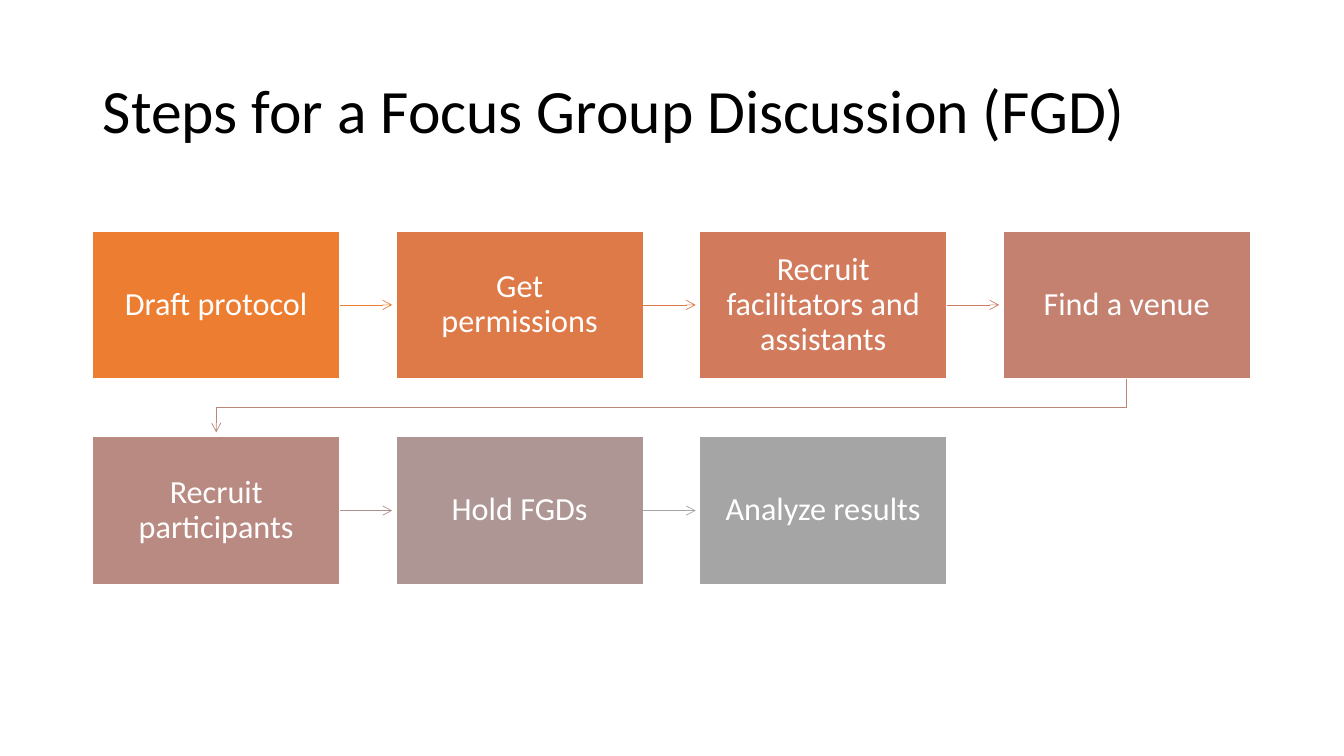
import pptx
import pptx.dml.color
import pptx.enum.shapes
import pptx.enum.text
import pptx.oxml.ns
import pptx.util
from lxml import etree
from pptx.dml.color import RGBColor
from pptx.util import Inches

BLACK = RGBColor(0x00, 0x00, 0x00)
WHITE = RGBColor(0xFF, 0xFF, 0xFF)

# Each step: label, box colour, colour of the arrow to the next step
STEPS = [
    ("Draft protocol", RGBColor(0xED, 0x7D, 0x31), RGBColor(0xED, 0x7D, 0x31)),
    ("Get permissions", RGBColor(0xDE, 0x7A, 0x47), RGBColor(0xDC, 0x7A, 0x4B)),
    ("Recruit facilitators and assistants", RGBColor(0xD1, 0x7B, 0x5C), RGBColor(0xCC, 0x7D, 0x64)),
    ("Find a venue", RGBColor(0xC4, 0x81, 0x70), RGBColor(0xBD, 0x86, 0x7B)),
    ("Recruit participants", RGBColor(0xB9, 0x8A, 0x82), RGBColor(0xB0, 0x93, 0x91)),
    ("Hold FGDs", RGBColor(0xAE, 0x96, 0x94), RGBColor(0xA5, 0xA5, 0xA5)),
    ("Analyze results", RGBColor(0xA5, 0xA5, 0xA5), None),
]
COLUMNS = 4
LEFT, TOP = 0.92, 2.29
BOX_WIDTH, BOX_HEIGHT = 2.45, 1.47
COLUMN_STEP, ROW_STEP = 3.01, 2.04
ARROW_GAP = 0.04


def format_text(text_frame, size, color, alignment):
    text_frame.word_wrap = True
    text_frame.vertical_anchor = pptx.enum.text.MSO_ANCHOR.MIDDLE
    paragraph = text_frame.paragraphs[0]
    paragraph.alignment = alignment
    paragraph.line_spacing = 0.9
    font = paragraph.runs[0].font
    font.name = "Calibri"
    font.size = pptx.util.Pt(size)
    font.color.rgb = color


def format_arrow(arrow, color):
    arrow.line.color.rgb = color
    arrow.line.width = pptx.util.Pt(0.5)
    line_element = arrow.line._get_or_add_ln()
    etree.SubElement(line_element, pptx.oxml.ns.qn("a:tailEnd"), type="arrow")


presentation = pptx.Presentation()
presentation.slide_width = Inches(13.33)
presentation.slide_height = Inches(7.5)
slide = presentation.slides.add_slide(presentation.slide_layouts[5])

title = slide.shapes.title
title.left, title.top = Inches(0.92), Inches(0.4)
title.width, title.height = Inches(11.5), Inches(1.45)
title.text_frame.text = "Steps for a Focus Group Discussion (FGD)"
format_text(title.text_frame, 44, BLACK, pptx.enum.text.PP_ALIGN.LEFT)

boxes = []
for index, (label, box_color, _) in enumerate(STEPS):
    row, column = divmod(index, COLUMNS)
    box = slide.shapes.add_shape(
        pptx.enum.shapes.MSO_SHAPE.RECTANGLE,
        Inches(LEFT + column * COLUMN_STEP), Inches(TOP + row * ROW_STEP),
        Inches(BOX_WIDTH), Inches(BOX_HEIGHT))
    box.shadow.inherit = False
    box.fill.solid()
    box.fill.fore_color.rgb = box_color
    box.line.color.rgb = WHITE
    box.line.width = pptx.util.Pt(1)
    text_frame = box.text_frame
    text_frame.text = label
    text_frame.margin_left = text_frame.margin_right = Inches(0.18)
    text_frame.margin_top = text_frame.margin_bottom = Inches(0.18)
    format_text(text_frame, 23, WHITE, pptx.enum.text.PP_ALIGN.CENTER)
    boxes.append(box)

for box, next_box, (_, _, arrow_color) in zip(boxes, boxes[1:], STEPS):
    if next_box.top == box.top:
        middle = box.top + box.height // 2
        arrow = slide.shapes.add_connector(
            pptx.enum.shapes.MSO_CONNECTOR.STRAIGHT,
            box.left + box.width, middle, next_box.left - Inches(ARROW_GAP), middle)
        arrow.begin_connect(box, 3)
        etree.SubElement(arrow._element.spPr, pptx.oxml.ns.qn("a:effectLst"))
    else:
        start_x = box.left + box.width // 2
        end_x = next_box.left + next_box.width // 2
        bottom = box.top + box.height
        turn_y = (bottom + next_box.top) // 2
        builder = slide.shapes.build_freeform(start_x, bottom)
        builder.add_line_segments(
            [(start_x, turn_y), (end_x, turn_y), (end_x, next_box.top - Inches(ARROW_GAP))],
            close=False)
        arrow = builder.convert_to_shape()
        arrow.shadow.inherit = False
        arrow.fill.background()
    format_arrow(arrow, arrow_color)

presentation.save("out.pptx")
